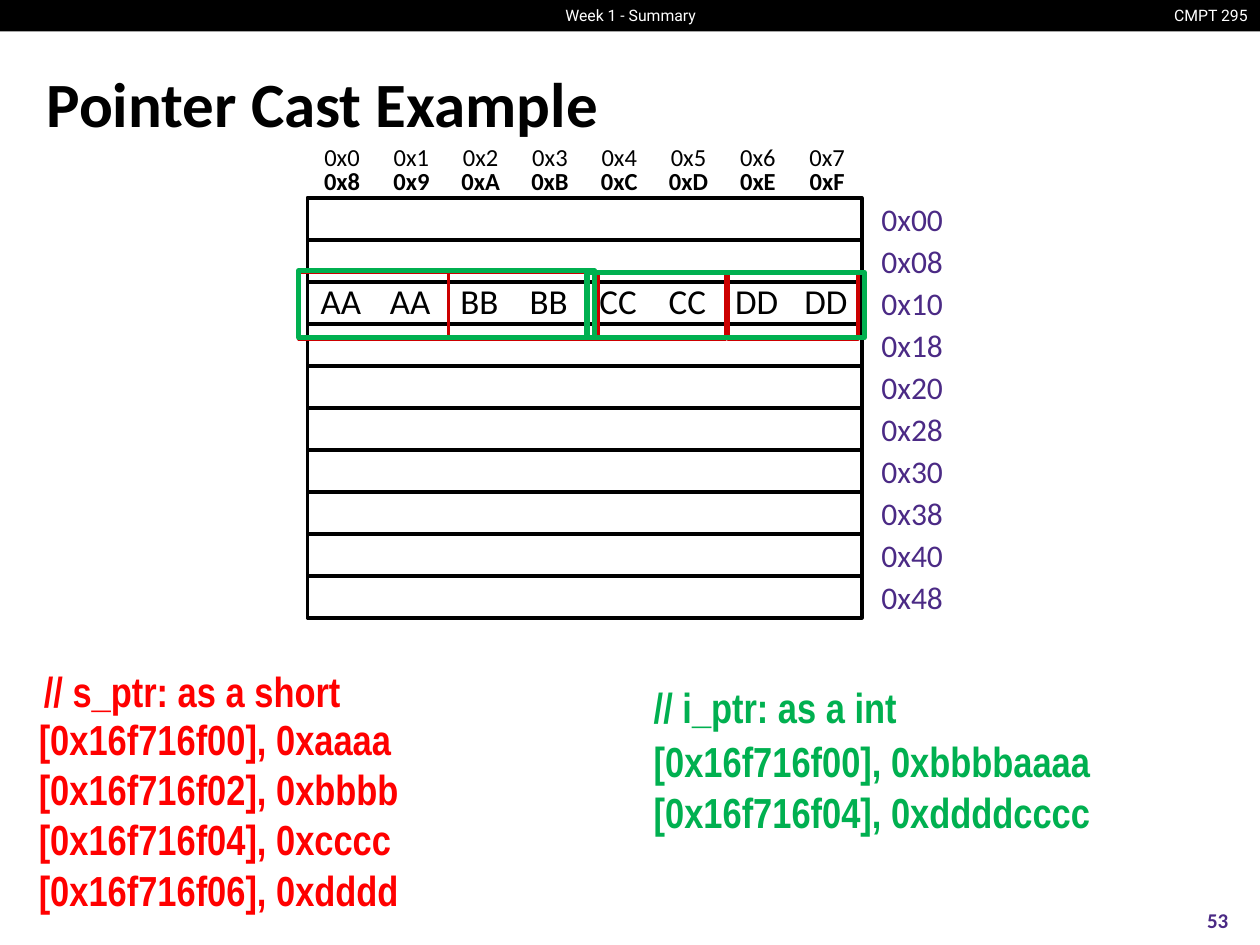
from dataclasses import dataclass

from pptx import Presentation
from pptx.dml.color import RGBColor
from pptx.enum.shapes import MSO_SHAPE
from pptx.enum.text import MSO_ANCHOR, MSO_AUTO_SIZE, PP_ALIGN
from pptx.util import Inches, Pt

RECTANGLE = MSO_SHAPE.RECTANGLE
TOP, MIDDLE = MSO_ANCHOR.TOP, MSO_ANCHOR.MIDDLE
LEFT, CENTER, RIGHT = PP_ALIGN.LEFT, PP_ALIGN.CENTER, PP_ALIGN.RIGHT
FIXED_SIZE = MSO_AUTO_SIZE.NONE
TITLE_ONLY = 5


@dataclass(frozen=True)
class Style:
    size: int
    color: str
    font: str = "Calibri"
    bold: bool = False


class Theme:
    black, white = "000000", "FFFFFF"
    red, green, dark_red, purple = "FF0000", "00B050", "CC0000", "4B2A85"
    banner = Style(9, white, "Roboto")
    title = Style(36, black, bold=True)
    page = Style(12, purple, bold=True)
    address = Style(18, purple)
    byte = Style(20, black)
    offset = Style(14, black)
    offset_bold = Style(14, black, bold=True)
    short_code = Style(24, red, "Arial Narrow", True)
    int_code = Style(24, green, "Arial Narrow", True)


TITLE = "Pointer Cast Example"
PAGE_NUMBER = "53"
BANNER = [
    ("CMPT 295", (9.19, 0, 0.81, 0.25), RIGHT),
    ("Week 1 - Summary", (4.3, 0, 1.41, 0.25), CENTER),
]
MEMORY_BYTES = ["AA", "AA", "BB", "BB", "CC", "CC", "DD", "DD"]
ROW_COUNT = 10
CODE = [
    (["[0x16f716f00], 0xaaaa", "[0x16f716f02], 0xbbbb",
      "[0x16f716f04], 0xcccc", "[0x16f716f06], 0xdddd"],
     (0.21, 5.61, 4.8, 1.75), Theme.short_code),
    (["// s_ptr: as a short"], (0.25, 5.23, 4.7, 0.5), Theme.short_code),
    (["// i_ptr: as a int"], (5.09, 5.36, 4.8, 0.5), Theme.int_code),
    (["[0x16f716f00], 0xbbbbaaaa", "[0x16f716f04], 0xddddcccc"],
     (5.09, 5.79, 4.8, 0.91), Theme.int_code),
]
FRAMES = [
    ((2.37, 2.16, 1.19, 0.53), Theme.dark_red, 2),
    ((3.56, 2.16, 1.19, 0.53), Theme.dark_red, 2),
    ((4.73, 2.16, 1.03, 0.53), Theme.dark_red, 2),
    ((5.78, 2.16, 1.03, 0.53), Theme.dark_red, 2),
    ((2.37, 2.15, 2.35, 0.53), Theme.green, 3),
    ((4.66, 2.16, 2.2, 0.52), Theme.green, 3),
]

GRID_LEFT, GRID_TOP = 2.44, 1.57
COLUMN_WIDTH, ROW_HEIGHT = 0.55, 1 / 3
GRID_WIDTH = COLUMN_WIDTH * len(MEMORY_BYTES)


def style_paragraph(paragraph, style, align):
    paragraph.alignment = align
    font = paragraph.font
    font.name, font.size, font.bold = style.font, Pt(style.size), style.bold
    font.color.rgb = RGBColor.from_string(style.color)


def add_text(slide, lines, box, styles, align=LEFT, anchor=TOP, wrap=False,
             spacing=None, inset=None):
    shape = slide.shapes.add_textbox(*map(Inches, box))
    frame = shape.text_frame
    frame.word_wrap, frame.vertical_anchor = wrap, anchor
    if inset is not None:
        frame.margin_left = frame.margin_right = Inches(inset)
        frame.margin_top = frame.margin_bottom = Inches(inset)
    frame.text = "\n".join(lines)
    for paragraph, style in zip(frame.paragraphs, styles):
        style_paragraph(paragraph, style, align)
        if spacing:
            paragraph.line_spacing = spacing


def add_rectangle(slide, box, fill=None, line=None, line_width=2):
    shape = slide.shapes.add_shape(RECTANGLE, *map(Inches, box))
    shape.shadow.inherit = False
    if fill:
        shape.fill.solid()
        shape.fill.fore_color.rgb = RGBColor.from_string(fill)
    else:
        shape.fill.background()
    if line:
        shape.line.color.rgb = RGBColor.from_string(line)
        shape.line.width = Pt(line_width)
    else:
        shape.line.fill.background()


def add_title(slide):
    title = slide.shapes.title
    title.left, title.top, title.width, title.height = map(
        Inches, (0.27, 0.4, 9.19, 0.83))
    frame = title.text_frame
    frame.text = TITLE
    frame.auto_size, frame.vertical_anchor = FIXED_SIZE, MIDDLE
    style_paragraph(frame.paragraphs[0], Theme.title, LEFT)


def add_memory_grid(slide):
    for row in range(ROW_COUNT):
        top = GRID_TOP + row * ROW_HEIGHT
        add_rectangle(slide, (GRID_LEFT, top, GRID_WIDTH, ROW_HEIGHT),
                      line=Theme.black)
        add_text(slide, [f"0x{row * 8:02X}"],
                 (GRID_LEFT + GRID_WIDTH, top, 0.8, ROW_HEIGHT),
                 [Theme.address], CENTER, MIDDLE)
    for column, byte in enumerate(MEMORY_BYTES):
        left = GRID_LEFT + column * COLUMN_WIDTH
        add_text(slide, [f"0x{column:X}", f"0x{column + 8:X}"],
                 (left, 1.16, COLUMN_WIDTH, 0.4),
                 [Theme.offset, Theme.offset_bold], CENTER, MIDDLE, spacing=0.8)
        add_text(slide, [byte], (left - 0.01, 2.22, COLUMN_WIDTH, ROW_HEIGHT),
                 [Theme.byte], CENTER, MIDDLE, inset=0)


def main():
    presentation = Presentation()
    presentation.slide_width, presentation.slide_height = Inches(10), Inches(7.5)
    slide = presentation.slides.add_slide(presentation.slide_layouts[TITLE_ONLY])
    add_rectangle(slide, (0, 0, 10, 0.25), fill=Theme.black)
    for text, box, align in BANNER:
        add_text(slide, [text], box, [Theme.banner], align)
    add_title(slide)
    add_text(slide, [PAGE_NUMBER], (9.33, 7.1, 0.67, 0.4), [Theme.page],
             CENTER, MIDDLE)
    for lines, box, style in CODE:
        add_text(slide, lines, box, [style] * len(lines), wrap=True)
    add_memory_grid(slide)
    for box, color, width in FRAMES:
        add_rectangle(slide, box, line=color, line_width=width)
    presentation.save("out.pptx")


if __name__ == "__main__":
    main()
